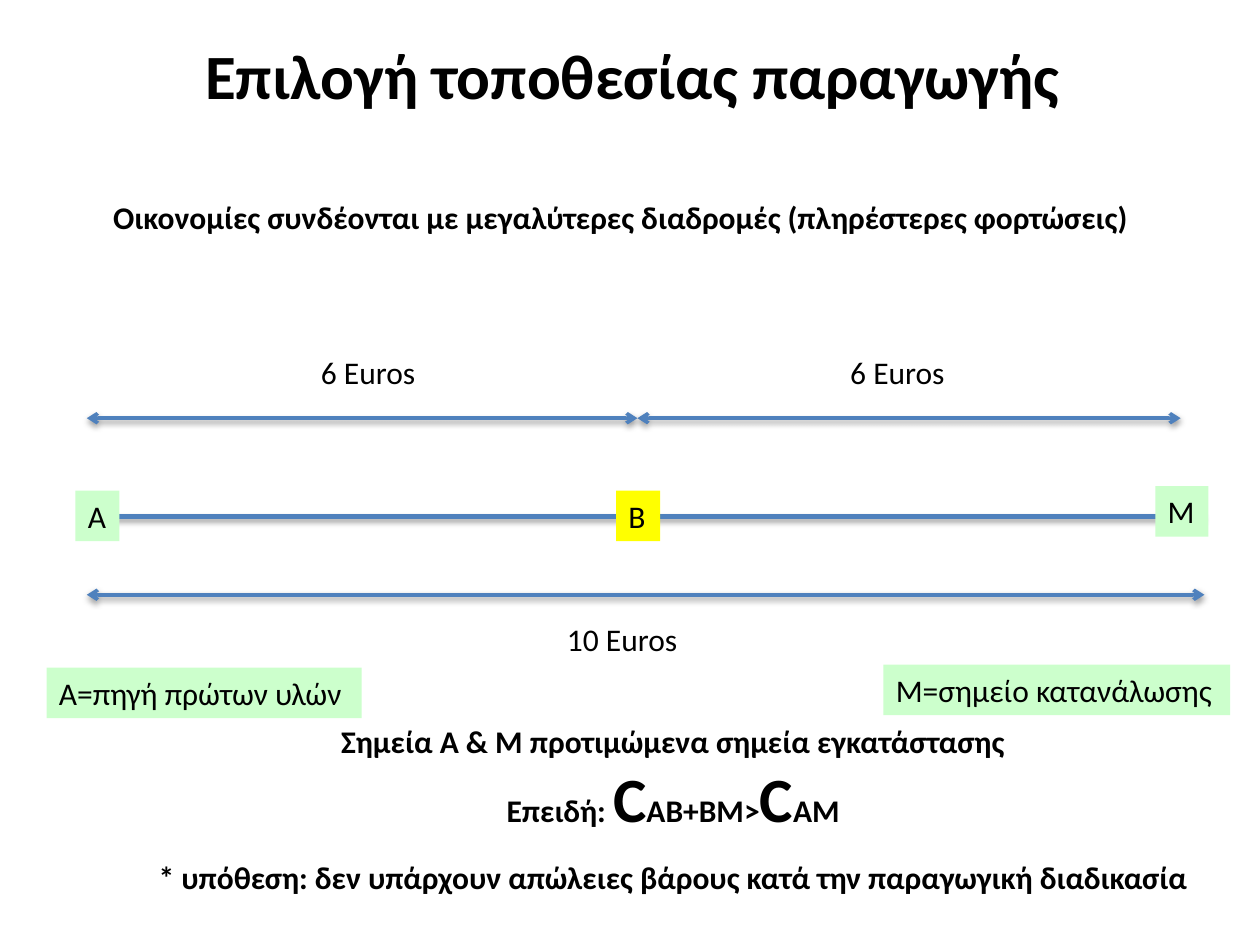
from pptx import Presentation
from pptx.dml.color import RGBColor
from pptx.enum.shapes import MSO_CONNECTOR, MSO_SHAPE
from pptx.enum.text import MSO_ANCHOR, MSO_AUTO_SIZE, PP_ALIGN
from pptx.util import Cm, Pt
from lxml.etree import SubElement
from pptx.oxml.ns import qn

THEME = dict(font="Calibri", ink="000000", line="4F81BD", green="CCFFCC",
             yellow="FFFF00", body=18, big=36)

# Content (lengths in cm)
TITLE = "Eπιλογή τοποθεσίας παραγωγής"
LEAD = "Oικονομίες συνδέονται με μεγαλύτερες διαδρομές (πληρέστερες φορτώσεις)"
START, MID, END = 1.75, 12.85, 24.28
ROW = 1.02

# Routes: from x, to x, y, width in points
ROUTES = [(MID, 23.8, 8.43, 2), (START, END, 11.99, 2),
          (START, MID, 8.43, 2), (START, END, 10.41, 3)]

# Labels: text, left, top, width, fill, bold
LABELS = [
    ("10 Euros", 11.18, 12.37, 2.77, None, False),
    ("6 Euros", 6.22, 6.99, 2.44, None, False),
    ("6 Euros", 16.89, 6.99, 2.44, None, False),
    ("A", 1.52, 9.89, 0.89, "green", False),
    ("B", 12.42, 9.89, 0.89, "yellow", False),
    ("M", 23.29, 9.8, 1.07, "green", False),
    (LEAD, 2.03, 3.86, 21.21, None, True),
    ("A=πηγή πρώτων υλών", 0.94, 13.46, 6.35, "green", False),
    ("M=σημείο κατανάλωσης", 17.81, 13.4, 6.99, "green", False),
]

# Closing lines: runs of (text, size), space before in points
CLOSING = [
    ([("Σημεία Α & Μ προτιμώμενα σημεία εγκατάστασης", "body")], 0),
    ([("Επειδή: ", "body"), ("C", "big"), ("ΑΒ+ΒΜ>", "body"),
      ("C", "big"), ("ΑΜ", "body")], 0),
    ([("* υπόθεση: δεν υπάρχουν απώλειες βάρους κατά την "
       "παραγωγική διαδικασία", "body")], 13),
]


def color(key):
    return RGBColor.from_string(THEME[key])


def write(para, text, size="body", bold=False, align=PP_ALIGN.LEFT):
    para.alignment = align
    run = para.add_run()
    run.text = text
    font = run.font
    font.name, font.size, font.bold = THEME["font"], Pt(THEME[size]), bold
    font.color.rgb = color("ink")


def place(shape, left, top, width, height):
    shape.left, shape.top = Cm(left), Cm(top)
    shape.width, shape.height = Cm(width), Cm(height)


def add_box(slide, left, top, width, height, fill=None):
    area = Cm(left), Cm(top), Cm(width), Cm(height)
    if fill:
        box = slide.shapes.add_shape(MSO_SHAPE.RECTANGLE, *area)
        box.shadow.inherit = False
        box.fill.solid()
        box.fill.fore_color.rgb = color(fill)
        box.line.fill.background()
    else:
        box = slide.shapes.add_textbox(*area)
    frame = box.text_frame
    frame.word_wrap = False
    frame.auto_size = MSO_AUTO_SIZE.SHAPE_TO_FIT_TEXT
    frame.vertical_anchor = MSO_ANCHOR.TOP
    return frame


def add_route(slide, left, right, y, width):
    # The soft shadow comes from the connector's theme style
    route = slide.shapes.add_connector(
        MSO_CONNECTOR.STRAIGHT, Cm(left), Cm(y), Cm(right), Cm(y))
    route.line.color.rgb = color("line")
    route.line.width = Pt(width)
    for end in ("a:headEnd", "a:tailEnd"):
        SubElement(route.line._get_or_add_ln(), qn(end), type="arrow")


def main():
    prs = Presentation()
    prs.slide_width, prs.slide_height = Cm(25.4), Cm(19.05)
    slide = prs.slides.add_slide(prs.slide_layouts[5])

    # Title
    title = slide.shapes.title
    place(title, 1.32, -0.1, 22.86, 3.18)
    title.text_frame.vertical_anchor = MSO_ANCHOR.MIDDLE
    write(title.text_frame.paragraphs[0], TITLE, size="big", bold=True,
          align=PP_ALIGN.CENTER)

    # Routes, then the labels over them
    for route in ROUTES:
        add_route(slide, *route)
    for text, left, top, width, fill, bold in LABELS:
        frame = add_box(slide, left, top, width, ROW, fill)
        write(frame.paragraphs[0], text, bold=bold)

    # Closing lines
    frame = add_box(slide, 2.84, 14.43, 21.46, 3.78)
    for row, (runs, gap) in enumerate(CLOSING):
        para = frame.add_paragraph() if row else frame.paragraphs[0]
        para.space_before = Pt(gap)
        for text, size in runs:
            write(para, text, size=size, bold=True, align=PP_ALIGN.CENTER)

    prs.save("out.pptx")


if __name__ == "__main__":
    main()
